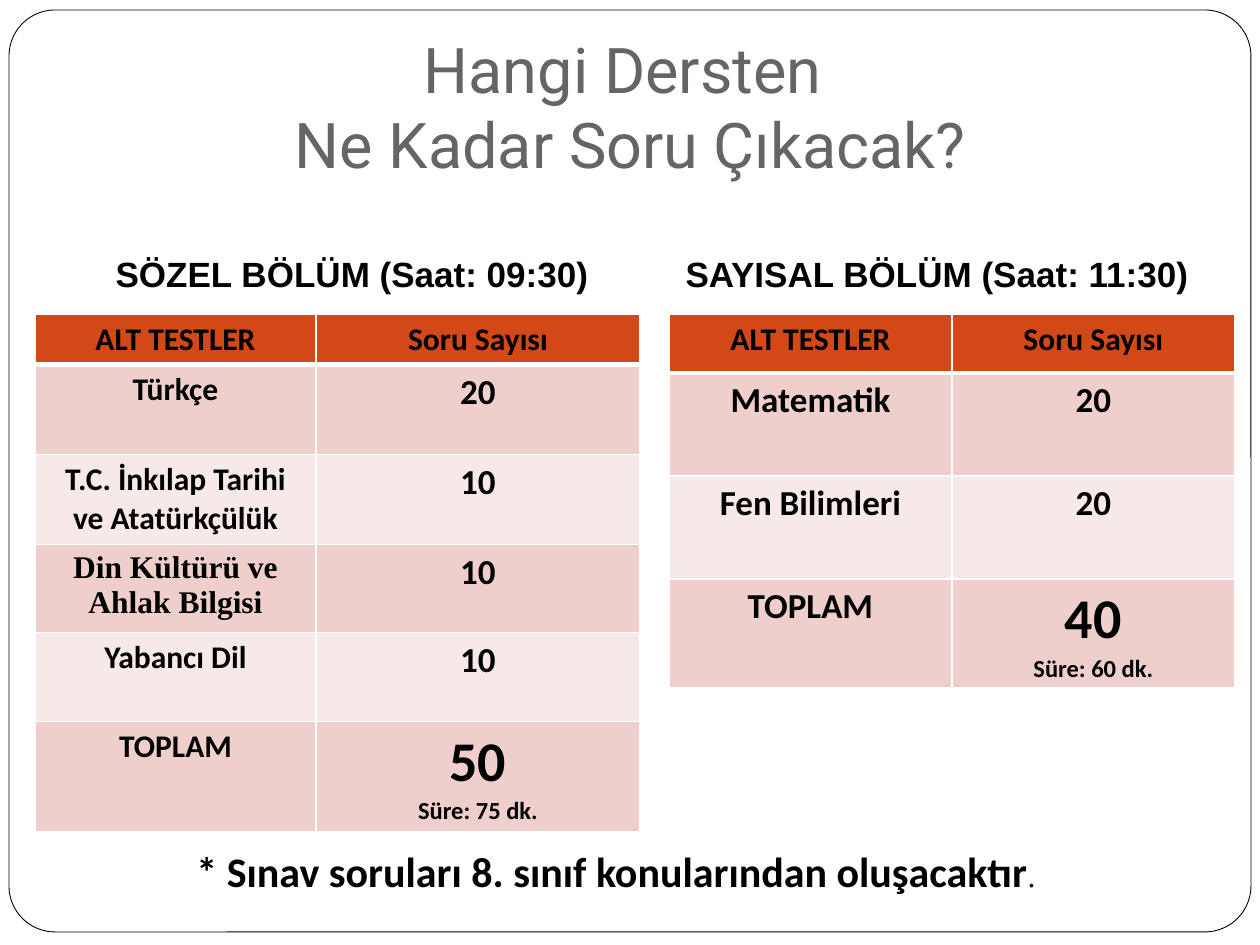
from lxml.etree import SubElement
from pptx import Presentation
from pptx.dml.color import RGBColor
from pptx.enum.shapes import MSO_SHAPE
from pptx.enum.text import MSO_ANCHOR, MSO_AUTO_SIZE, PP_ALIGN as ALIGN
from pptx.oxml.ns import qn
from pptx.util import Emu, Pt

PX = 914400 / 126
BLACK, WHITE, GREY = "000000", "FFFFFF", "696464"
HEADER_FILL, ROW_FILLS = "D34817", ("EFCFCC", "F7E9E8")


def px(*lengths):
    return [Emu(round(length * PX)) for length in lengths]


def color(value):
    return RGBColor.from_string(value)


class SlideBuilder:
    base = {"name": "Calibri", "size": 18, "bold": True, "color": BLACK}

    def __init__(self, presentation):
        self.slide = presentation.slides.add_slide(presentation.slide_layouts[5])
        self.shapes = self.slide.shapes

    def run(self, paragraph, text, **changes):
        values = {**self.base, **changes}
        run = paragraph.add_run()
        run.text = text
        run.font.color.rgb = color(values.pop("color"))
        values["size"] = Pt(values["size"])
        for key, value in values.items():
            setattr(run.font, key, value)

    def frame(self, box):
        """Rounded outline behind everything else."""
        shape = self.shapes.add_shape(MSO_SHAPE.ROUNDED_RECTANGLE, *px(*box))
        shape.adjustments[0] = 0.05
        shape.shadow.inherit = False
        shape.fill.solid()
        shape.fill.fore_color.rgb = color(WHITE)
        shape.line.color.rgb = color(BLACK)
        shape.line.width = Pt(0.5)
        tree = shape._element.getparent()
        tree.insert(2, shape._element)

    def title(self, box, lines):
        title = self.shapes.title
        title.left, title.top, title.width, title.height = px(*box)
        text_frame = title.text_frame
        settings = {"auto_size": MSO_AUTO_SIZE.NONE, "word_wrap": True,
                    "vertical_anchor": MSO_ANCHOR.BOTTOM, "margin_bottom": Pt(7.2)}
        for key, value in settings.items():
            setattr(text_frame, key, value)
        paragraph = text_frame.paragraphs[0]
        paragraph.alignment = ALIGN.CENTER
        for index, line in enumerate(lines):
            if index:
                paragraph.add_line_break()
            self.run(paragraph, line, name="Roboto", size=36, bold=False, color=GREY)

    def text(self, box, runs, align=ALIGN.LEFT):
        text_frame = self.shapes.add_textbox(*px(*box)).text_frame
        text_frame.word_wrap = True
        paragraph = text_frame.paragraphs[0]
        paragraph.alignment = align
        for text, style in runs:
            self.run(paragraph, text, **style)

    def borders(self, cell, top, bottom):
        properties = cell._tc.get_or_add_tcPr()
        for side, width in (("L", 1), ("R", 1), ("T", top), ("B", bottom)):
            line = SubElement(properties, qn(f"a:ln{side}"), w=str(Pt(width)))
            fill = SubElement(line, qn("a:solidFill"))
            SubElement(fill, qn("a:srgbClr"), val=WHITE)

    def cell(self, cell, row, paragraphs):
        self.borders(cell, 3 if row == 1 else 1, 3 if row == 0 else 1)
        cell.fill.solid()
        cell.fill.fore_color.rgb = color(ROW_FILLS[(row - 1) % 2] if row else HEADER_FILL)
        for index, (text, style) in enumerate(paragraphs):
            text_frame = cell.text_frame
            paragraph = text_frame.add_paragraph() if index else text_frame.paragraphs[0]
            paragraph.alignment = ALIGN.CENTER
            self.run(paragraph, text, **style)

    def table(self, left, top, widths, heights, rows):
        table = self.shapes.add_table(len(rows), len(widths), *px(
            left, top, sum(widths), sum(heights))).table
        for column, width in zip(table.columns, px(*widths)):
            column.width = width
        for row, height in zip(table.rows, px(*heights)):
            row.height = height
        for row_index, row in enumerate(rows):
            for column_index, paragraphs in enumerate(row):
                self.cell(table.cell(row_index, column_index), row_index, paragraphs)


def exam_rows(lessons, total, duration, label_size):
    """Header, one row per lesson (name, count, style), and the total."""
    label, count = {"size": label_size}, {"size": 20}
    header = [[("ALT TESTLER", {})], [("Soru Sayısı", {})]]
    body = [[[(name, {**label, **style})], [(number, count)]]
            for name, number, style in lessons]
    footer = [[("TOPLAM", label)], [(total, {"size": 32}), (duration, {"size": 14})]]
    return [header, *body, footer]


def main():
    presentation = Presentation()
    presentation.slide_width, presentation.slide_height = px(1260, 945)
    builder = SlideBuilder(presentation)

    # Frame and title
    builder.frame((9, 10, 1242, 922))
    builder.title((35, 26, 1191, 168), ["Hangi Dersten ", "Ne Kadar Soru Çıkacak?"])

    # Section headings
    heading = {"name": "Arial", "size": 20}
    for left, text in ((84, "SÖZEL BÖLÜM (Saat: 09:30)"),
                       (669, "SAYISAL BÖLÜM (Saat: 11:30)")):
        builder.text((left, 246, 536, 55), [(text, heading)], ALIGN.CENTER)

    # Verbal and numerical tables
    verbal = [("Türkçe", "20", {}),
              ("T.C. İnkılap Tarihi ve Atatürkçülük", "10", {}),
              ("Din Kültürü ve Ahlak Bilgisi", "10", {"name": "Times New Roman"}),
              ("Yabancı Dil", "10", {})]
    numerical = [("Matematik", "20", {}), ("Fen Bilimleri", "20", {})]
    builder.table(35, 314, (281, 324), (50, 90, 90, 84, 89, 110),
                  exam_rows(verbal, "50", "Süre: 75 dk.", 18))
    builder.table(669, 314, (283, 283), (59, 103, 103, 108),
                  exam_rows(numerical, "40", "Süre: 60 dk.", 20))

    # Footnote
    builder.text((184, 839, 1150, 63), [
        ("* Sınav soruları 8. sınıf konularından oluşacaktır", {"size": 24}),
        (".", {"name": "Times New Roman", "bold": False})])

    presentation.save("out.pptx")


if __name__ == "__main__":
    main()
